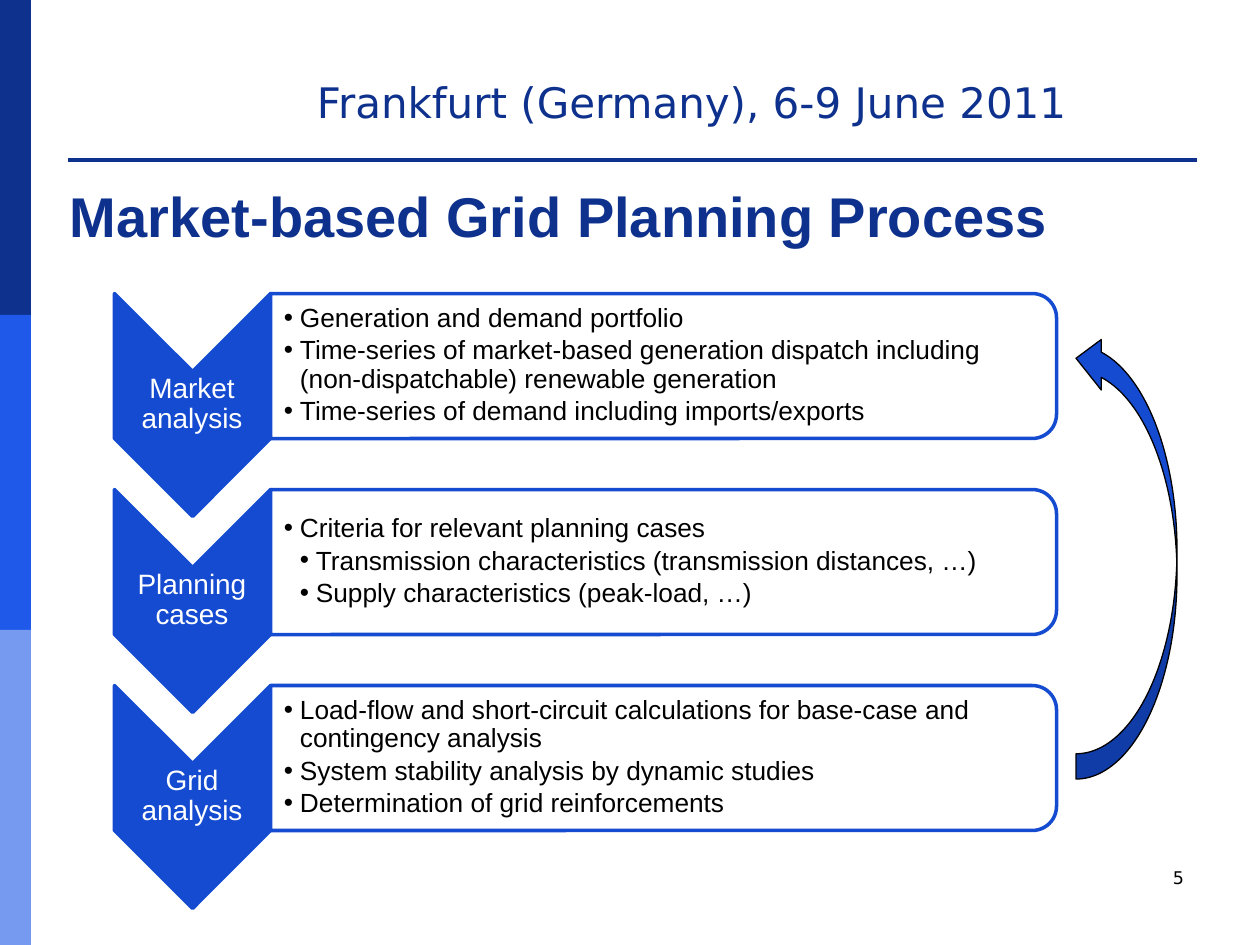
from lxml import etree
from pptx import Presentation
from pptx.dml.color import RGBColor
from pptx.enum.shapes import MSO_SHAPE
from pptx.enum.text import MSO_ANCHOR, PP_ALIGN
from pptx.oxml.ns import qn
from pptx.util import Emu, Pt

RECTANGLE = MSO_SHAPE.RECTANGLE
CHEVRON = MSO_SHAPE.CHEVRON
PANEL = MSO_SHAPE.ROUND_2_SAME_RECTANGLE
RETURN_ARROW = MSO_SHAPE.CURVED_RIGHT_ARROW
LEFT, CENTER, RIGHT = PP_ALIGN.LEFT, PP_ALIGN.CENTER, PP_ALIGN.RIGHT
TOP, MIDDLE = MSO_ANCHOR.TOP, MSO_ANCHOR.MIDDLE

NAVY, BRIGHT, PALE, BLUE = "0E318D", "1F59E9", "779AF1", "154BD1"
WHITE, BLACK = "FFFFFF", "000000"
EMU_PER_PX = 914400 / 126
DEFAULT_INSETS = (13, 6, 13, 6)
ROW_PITCH = 196
INDENT = 16

# Each step: label, then (level, text) for every bullet
STEPS = [
    ("Market analysis", [
        (1, "Generation and demand portfolio"),
        (1, "Time-series of market-based generation dispatch including "
            "(non-dispatchable) renewable generation"),
        (1, "Time-series of demand including imports/exports"),
    ]),
    ("Planning cases", [
        (1, "Criteria for relevant planning cases"),
        (2, "Transmission characteristics (transmission distances, …)"),
        (2, "Supply characteristics (peak-load, …)"),
    ]),
    ("Grid analysis", [
        (1, "Load-flow and short-circuit calculations for base-case and "
            "contingency analysis"),
        (1, "System stability analysis by dynamic studies"),
        (1, "Determination of grid reinforcements"),
    ]),
]


def px(length):
    return Emu(round(length * EMU_PER_PX))


def color(hex_code):
    return RGBColor.from_string(hex_code)


def add_block(slide, preset, box, fill, line=None, line_width=2, rotation=0):
    block = slide.shapes.add_shape(preset, *map(px, box))
    block.shadow.inherit = False
    block.rotation = rotation
    block.fill.solid()
    block.fill.fore_color.rgb = color(fill)
    if line:
        block.line.color.rgb = color(line)
        block.line.width = Pt(line_width)
    else:
        block.line.fill.background()


def set_border(cell, side, ink=None, width=0):
    border = etree.SubElement(cell._tc.get_or_add_tcPr(), qn(f"a:ln{side}"))
    border.set("w", str(Pt(width)))
    if ink:
        fill = etree.SubElement(border, qn("a:solidFill"))
        etree.SubElement(fill, qn("a:srgbClr")).set("val", ink)
    else:
        etree.SubElement(border, qn("a:noFill"))


def add_header_table(slide, box):
    """One empty cell whose bottom border underlines the header."""
    table = slide.shapes.add_table(1, 1, *map(px, box)).table
    table.first_row = table.horz_banding = False
    cell = table.cell(0, 0)
    cell.margin_left = cell.margin_right = 0
    cell.margin_top = cell.margin_bottom = 0
    for side in "LRT":
        set_border(cell, side)
    set_border(cell, "B", NAVY, 2.25)
    cell.fill.background()
    paragraph = cell.text_frame.paragraphs[0]._p
    etree.SubElement(paragraph, qn("a:endParaRPr")).set("sz", "800")


def set_bullet(paragraph, level):
    properties = paragraph._p.get_or_add_pPr()
    properties.set("marL", str(px(INDENT * level)))
    properties.set("indent", str(-px(INDENT)))
    etree.SubElement(properties, qn("a:buFont")).set("typeface", "Arial")
    etree.SubElement(properties, qn("a:buChar")).set("char", "•")


def add_text(slide, box, lines, size, ink=BLACK, font="Arial", bold=False,
             align=LEFT, anchor=TOP, insets=DEFAULT_INSETS, spacing=None,
             space_after=None):
    """Lines are (level, text) pairs; level 0 has no bullet."""
    frame = slide.shapes.add_textbox(*map(px, box)).text_frame
    frame.word_wrap = True
    frame.vertical_anchor = anchor
    (frame.margin_left, frame.margin_top,
     frame.margin_right, frame.margin_bottom) = map(px, insets)
    for index, (level, text) in enumerate(lines):
        paragraph = frame.add_paragraph() if index else frame.paragraphs[0]
        paragraph.alignment = align
        if spacing:
            paragraph.line_spacing = spacing
        if space_after:
            paragraph.space_after = Pt(space_after)
        if level:
            set_bullet(paragraph, level)
        run = paragraph.add_run()
        run.text = text
        run.font.size = Pt(size)
        run.font.name = font
        run.font.bold = bold
        run.font.color.rgb = color(ink)


def add_step(slide, offset, label, bullets):
    add_block(slide, CHEVRON, (81, 327 + offset, 223, 156), BLUE, BLUE, rotation=90)
    add_text(slide, (114, 371 + offset, 156, 67), [(0, label)], 16, ink=WHITE,
             align=CENTER, anchor=MIDDLE, insets=(1, 1, 1, 1), spacing=0.9)
    add_block(slide, PANEL, (591, -27 + offset, 145, 786), WHITE, BLUE, rotation=90)
    add_text(slide, (269, 300 + offset, 780, 131), bullets, 15, anchor=MIDDLE,
             insets=(15, 1, 1, 1), spacing=0.9, space_after=2.25)


def main():
    deck = Presentation()
    deck.slide_width, deck.slide_height = px(1260), px(945)
    slide = deck.slides.add_slide(deck.slide_layouts[6])

    for index, band in enumerate((NAVY, BRIGHT, PALE)):
        add_block(slide, RECTANGLE, (0, 315 * index, 31, 315), band)
    add_header_table(slide, (68, 135, 1129, 25))
    add_text(slide, (304, 71, 829, 63), [(0, "Frankfurt (Germany), 6-9 June 2011")],
             24, ink=NAVY, font="DejaVu Sans")
    add_text(slide, (57, 174, 1134, 82), [(0, "Market-based Grid Planning Process")],
             32, ink=NAVY, bold=True, anchor=MIDDLE)

    for index, (label, bullets) in enumerate(STEPS):
        add_step(slide, ROW_PITCH * index, label, bullets)

    add_block(slide, RETURN_ARROW, (1076, 333, 101, 446), BLUE, BLACK,
              line_width=0.75, rotation=180)
    add_text(slide, (903, 861, 294, 63), [(0, "5")], 10, font="DejaVu Sans",
             align=RIGHT)
    deck.save("out.pptx")


if __name__ == "__main__":
    main()
